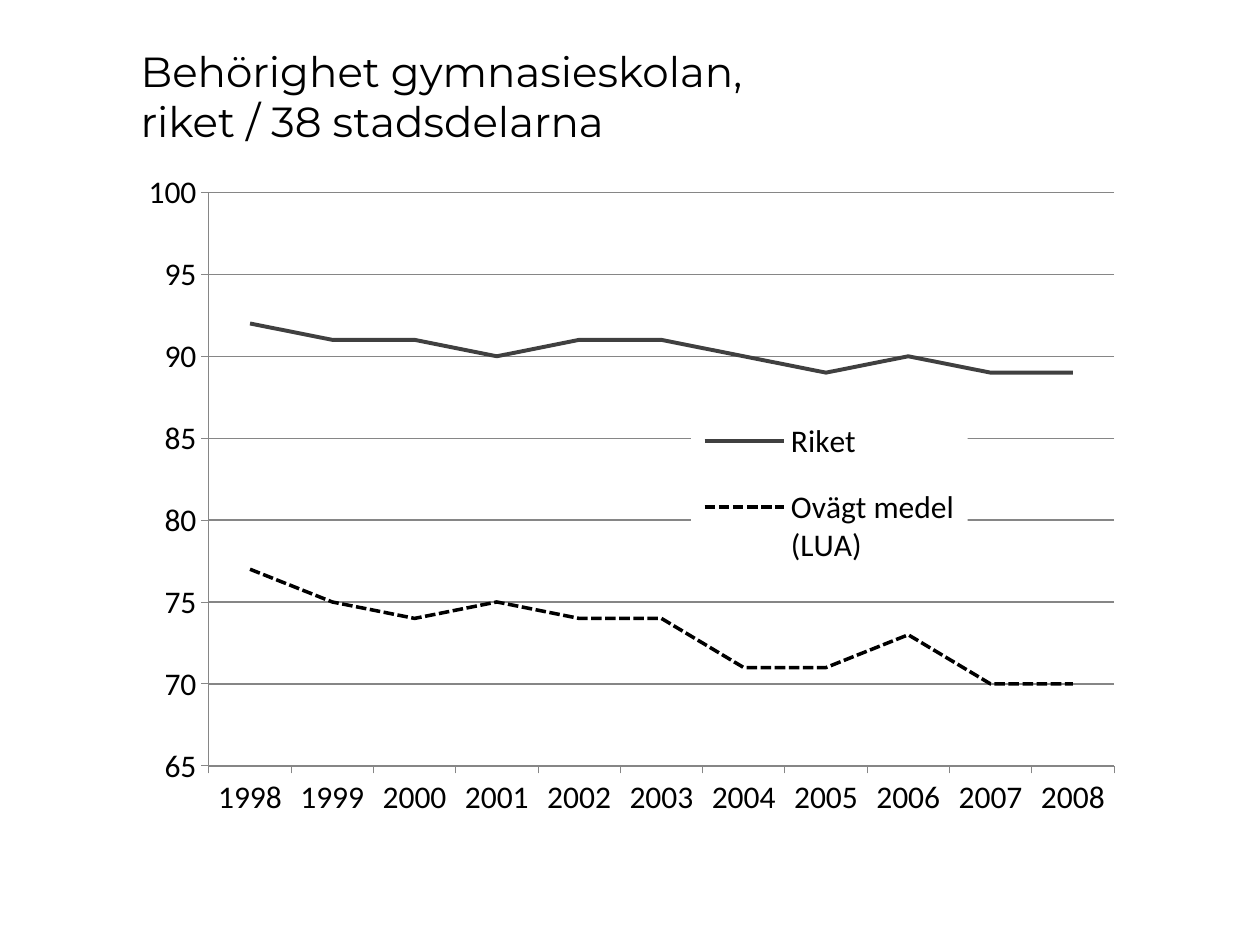
import dataclasses

import lxml.etree
import pptx
import pptx.chart.data
import pptx.dml.color
import pptx.enum.chart
import pptx.enum.dml
import pptx.enum.text
import pptx.oxml
import pptx.oxml.ns
import pptx.util

PX = 914400 // 126
YEARS = [str(year) for year in range(1998, 2009)]
NATIONAL = [92, 91, 91, 90, 91, 91, 90, 89, 90, 89, 89]
DISTRICTS = [77, 75, 74, 75, 74, 74, 71, 71, 73, 70, 70]


@dataclasses.dataclass(frozen=True)
class Theme:
    """Colours, fonts and type sizes of the slide."""
    text: str = "000000"
    national: str = "404040"
    districts: str = "000000"
    grid: str = "868686"
    background: str = "FFFFFF"
    title_font: str = "Montserrat"
    chart_font: str = "Calibri"
    title_size: int = 24
    chart_size: int = 18


THEME = Theme()


def to_emu(box):
    """Turn a box in px into EMU lengths."""
    return [pptx.util.Emu(length * PX) for length in box]


def style_font(font, name, size):
    """Set typeface, size and text colour."""
    font.name = name
    font.size = pptx.util.Pt(size)
    font.bold = False
    font.color.rgb = pptx.dml.color.RGBColor.from_string(THEME.text)


def style_line(line, color, width):
    """Set colour and width in points of a line."""
    line.color.rgb = pptx.dml.color.RGBColor.from_string(color)
    line.width = pptx.util.Pt(width)


def set_layout(parent, index, fractions, inner=False):
    """Give a chart part a manual layout in fractions of the chart."""
    for old_layout in parent.findall(pptx.oxml.ns.qn("c:layout")):
        parent.remove(old_layout)
    values = [("layoutTarget", "inner")] if inner else []
    values += [("xMode", "edge"), ("yMode", "edge")]
    values += zip("xywh", fractions)
    layout = lxml.etree.Element(pptx.oxml.ns.qn("c:layout"))
    manual = lxml.etree.SubElement(layout, pptx.oxml.ns.qn("c:manualLayout"))
    for name, value in values:
        lxml.etree.SubElement(manual, pptx.oxml.ns.qn(f"c:{name}")).set("val", str(value))
    parent.insert(index, layout)


def add_title(slide, box, lines):
    """Place the title with one paragraph for each line."""
    title = slide.shapes.title
    title.left, title.top, title.width, title.height = to_emu(box)
    frame = title.text_frame
    frame.text = "\n".join(lines)
    frame.word_wrap = True
    frame.auto_size = pptx.enum.text.MSO_AUTO_SIZE.NONE
    frame.vertical_anchor = pptx.enum.text.MSO_ANCHOR.TOP
    for paragraph in frame.paragraphs:
        paragraph.alignment = pptx.enum.text.PP_ALIGN.LEFT
        paragraph.space_before = pptx.util.Pt(0)
        paragraph.line_spacing = 1.0
        style_font(paragraph.font, THEME.title_font, THEME.title_size)


def style_axes(chart):
    """Set scale, ticks and gridlines."""
    value_axis = chart.value_axis
    value_axis.minimum_scale, value_axis.maximum_scale = 65, 100
    value_axis.major_unit = 5
    value_axis.has_major_gridlines = True
    style_line(value_axis.major_gridlines.format.line, THEME.grid, 0.75)
    value_axis.tick_labels.number_format = "General"
    value_axis.tick_labels.number_format_is_linked = False
    for axis in (value_axis, chart.category_axis):
        axis.major_tick_mark = pptx.enum.chart.XL_TICK_MARK.OUTSIDE
        style_line(axis.format.line, THEME.grid, 0.5)


def add_legend(chart):
    """Place a filled legend over the plot."""
    chart.has_legend = True
    legend = chart.legend
    legend.position = pptx.enum.chart.XL_LEGEND_POSITION.RIGHT
    legend.include_in_layout = False
    style_font(legend.font, THEME.chart_font, THEME.chart_size)
    element = chart._chartSpace.chart.find(pptx.oxml.ns.qn("c:legend"))
    set_layout(element, 1, (0.55, 0.32, 0.27, 0.28))
    fill = pptx.oxml.parse_xml(
        f'<c:spPr {pptx.oxml.ns.nsdecls("c", "a")}><a:solidFill>'
        f'<a:srgbClr val="{THEME.background}"/></a:solidFill></c:spPr>')
    element.find(pptx.oxml.ns.qn("c:txPr")).addprevious(fill)


def add_line_chart(slide, box):
    """Place the line chart of eligibility by year."""
    data = pptx.chart.data.CategoryChartData()
    data.categories = YEARS
    data.add_series("Riket", NATIONAL)
    data.add_series("Ovägt medel (LUA)", DISTRICTS)
    chart = slide.shapes.add_chart(
        pptx.enum.chart.XL_CHART_TYPE.LINE, *to_emu(box), data).chart
    chart.has_title = False
    style_font(chart.font, THEME.chart_font, THEME.chart_size)
    plot = chart.plots[0]
    plot.vary_by_categories = False
    for series, color in zip(plot.series, (THEME.national, THEME.districts)):
        series.smooth = False
        series.marker.style = pptx.enum.chart.XL_MARKER_STYLE.NONE
        style_line(series.format.line, color, 2.25)
    dashed_line = plot.series[1].format.line
    dashed_line.width = pptx.util.Pt(2)
    dashed_line.dash_style = pptx.enum.dml.MSO_LINE.SQUARE_DOT
    style_axes(chart)
    add_legend(chart)
    set_layout(chart._chartSpace.chart.plotArea, 0, (0.079, 0.036, 0.884, 0.809), inner=True)


def main():
    """Build and save the presentation."""
    presentation = pptx.Presentation()
    presentation.slide_width, presentation.slide_height = to_emu((1260, 945))
    slide = presentation.slides.add_slide(presentation.slide_layouts[5])
    add_line_chart(slide, (128, 167, 1024, 709))
    add_title(slide, (128, 39, 925, 115),
              ("Behörighet gymnasieskolan,", "riket / 38 stadsdelarna"))
    presentation.save("out.pptx")


if __name__ == "__main__":
    main()
